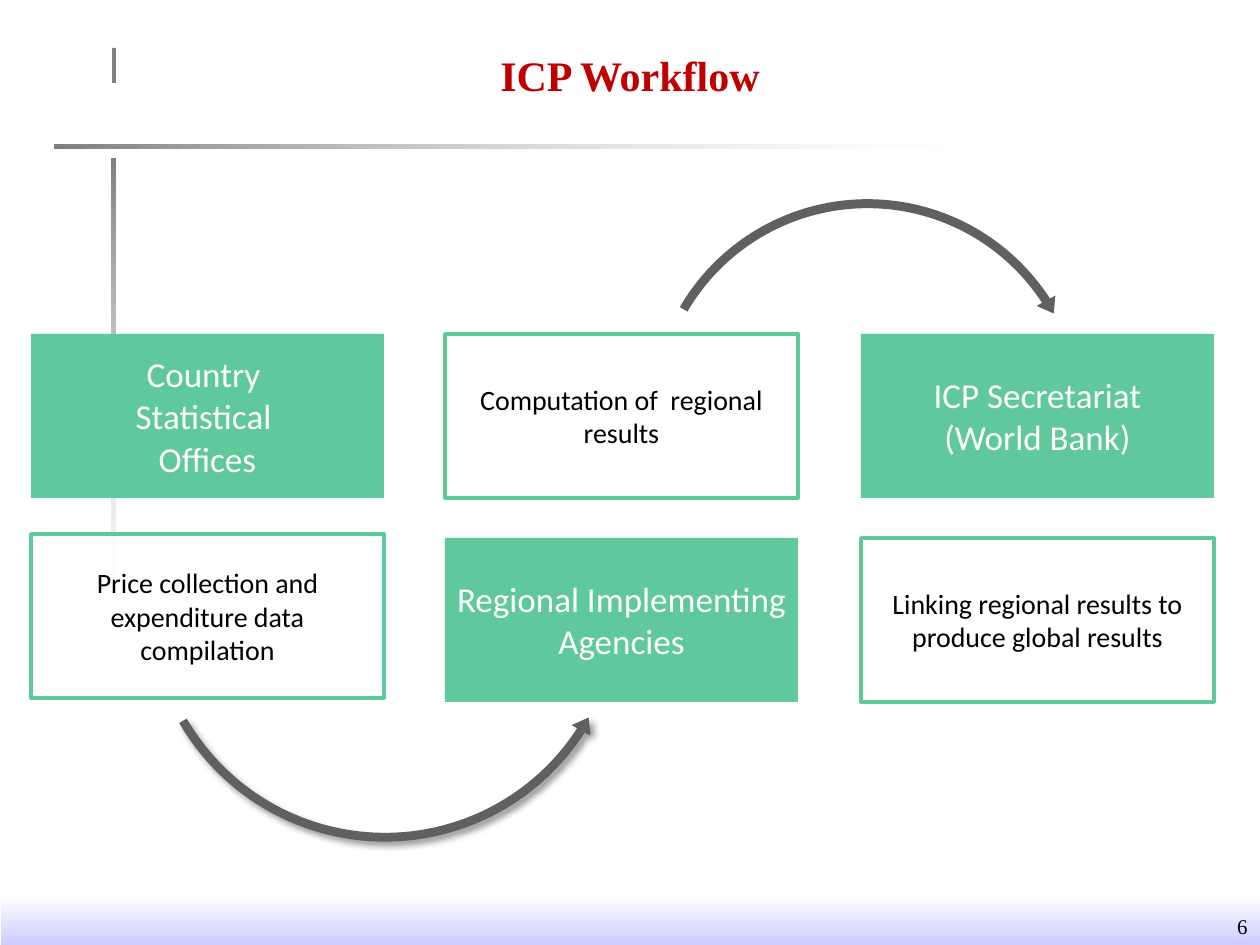
from dataclasses import dataclass

from lxml import etree
from pptx import Presentation
from pptx.dml.color import RGBColor
from pptx.enum.shapes import MSO_SHAPE
from pptx.enum.text import MSO_ANCHOR, PP_ALIGN
from pptx.oxml.ns import qn
from pptx.util import Emu, Pt

PX = 914400 / 126


@dataclass(frozen=True)
class Theme:
    green: str = "60C99C"
    red: str = "C00000"
    white: str = "FFFFFF"
    black: str = "000000"
    rule: str = "808080"
    arrow: str = "606060"
    footer: str = "CCCCFF"
    serif: str = "Times New Roman"
    sans: str = "Calibri"
    title_size: int = 24
    actor_size: int = 20
    task_size: int = 16
    number_size: int = 12


THEME = Theme()

# Grid of boxes: three columns, two rows
BOX_WIDTH, BOX_HEIGHT = 353, 164
COLUMNS = (31, 445, 861)
TOP_ROW, BOTTOM_ROW = 334, 538


def px(length):
    return Emu(round(length * PX))


def rgb(value):
    return RGBColor.from_string(value)


def set_alpha(color_element, percent):
    alpha = etree.SubElement(color_element, qn("a:alpha"))
    alpha.set("val", str(percent * 1000))


def add_shape(page, preset, bounds, fill=None):
    shape = page.shapes.add_shape(preset, *map(px, bounds))
    shape.shadow.inherit = False
    shape.line.fill.background()
    if fill:
        shape.fill.solid()
        shape.fill.fore_color.rgb = rgb(fill)
    return shape


def add_gradient_bar(page, bounds, start, end, angle, end_alpha=100):
    bar = add_shape(page, MSO_SHAPE.RECTANGLE, bounds)
    bar.fill.gradient()
    bar.fill.gradient_angle = angle
    for stop, color in zip(bar.fill.gradient_stops, (start, end)):
        stop.color.rgb = rgb(color)
    if end_alpha < 100:
        set_alpha(bar.element.spPr.findall(".//" + qn("a:srgbClr"))[-1], end_alpha)


def write_text(frame, lines, font, size, color, align=PP_ALIGN.CENTER, bold=False, after=0):
    frame.word_wrap = True
    for index, line in enumerate(lines):
        para = frame.paragraphs[0] if index == 0 else frame.add_paragraph()
        para.alignment = align
        para.space_after = Pt(after)
        span = para.add_run()
        span.text = line
        span.font.name = font
        span.font.size = Pt(size)
        span.font.bold = bold
        span.font.color.rgb = rgb(color)


def add_actor(page, left, top, lines):
    box = add_shape(page, MSO_SHAPE.RECTANGLE, (left, top, BOX_WIDTH, BOX_HEIGHT), THEME.green)
    frame = box.text_frame
    frame.vertical_anchor = MSO_ANCHOR.MIDDLE
    frame.margin_left = frame.margin_right = px(5)
    frame.margin_top = frame.margin_bottom = px(4)
    write_text(frame, lines, THEME.sans, THEME.actor_size, THEME.white)


def add_task(page, left, top, text):
    box = add_shape(page, MSO_SHAPE.RECTANGLE, (left, top, BOX_WIDTH, BOX_HEIGHT), THEME.white)
    set_alpha(box.element.spPr.find(".//" + qn("a:srgbClr")), 90)
    box.line.color.rgb = rgb(THEME.green)
    box.line.width = Pt(2)
    box.text_frame.vertical_anchor = MSO_ANCHOR.MIDDLE
    write_text(box.text_frame, [text], THEME.sans, THEME.task_size, THEME.black, after=6)


def add_arc_arrow(page, preset, bounds, rotation, adjustments):
    arrow = add_shape(page, preset, bounds, THEME.arrow)
    arrow.rotation = rotation
    for index, value in enumerate(adjustments):
        arrow.adjustments[index] = value
    return arrow


def add_shadow(shape):
    effects = shape.element.spPr.find(qn("a:effectLst"))
    shadow = etree.SubElement(effects, qn("a:outerShdw"))
    for name, value in (("blurRad", Pt(4)), ("dist", Pt(3)), ("dir", 45 * 60000)):
        shadow.set(name, str(int(value)))
    color = etree.SubElement(shadow, qn("a:srgbClr"))
    color.set("val", THEME.black)
    set_alpha(color, 40)


def add_backdrop(page):
    add_gradient_bar(page, (54, 145, 902, 4), THEME.rule, THEME.white, 0, 29)
    add_gradient_bar(page, (111, 159, 4, 511), THEME.rule, THEME.white, 270, 29)
    add_shape(page, MSO_SHAPE.RECTANGLE, (112, 48, 4, 35), THEME.rule)
    add_gradient_bar(page, (1, 895, 1259, 50), THEME.white, THEME.footer, 270)
    number = page.shapes.add_textbox(*map(px, (1002, 907, 258, 38)))
    write_text(number.text_frame, ["6"], THEME.serif, THEME.number_size, THEME.black,
               PP_ALIGN.RIGHT)


def add_title(page, text):
    title = page.shapes.title
    title.left, title.top, title.width, title.height = map(px, (63, 38, 1134, 91))
    title.text_frame.vertical_anchor = MSO_ANCHOR.TOP
    title.text_frame.margin_top = px(11)
    write_text(title.text_frame, [text], THEME.serif, THEME.title_size, THEME.red, bold=True)


def main():
    deck = Presentation()
    deck.slide_width, deck.slide_height = px(1260), px(945)
    page = deck.slides.add_slide(deck.slide_layouts[5])
    add_backdrop(page)
    add_title(page, "ICP Workflow")

    # Arrows from one stage to the next
    lower = add_arc_arrow(page, MSO_SHAPE.LEFT_CIRCULAR_ARROW, (141, 360, 488, 488), 353.8,
                          (0.018, 2.204, 23.402, 93.688, 0.022))
    add_shadow(lower)
    add_arc_arrow(page, MSO_SHAPE.CIRCULAR_ARROW, (644, 193, 447, 447), 7.5,
                  (0.02, 2.413, 191.718, 121.642, 0.024))

    # Tasks and the bodies in charge of them
    first, second, third = COLUMNS
    add_task(page, first, BOTTOM_ROW - 4, "Price collection and expenditure data compilation")
    add_task(page, second, TOP_ROW, "Computation of  regional results")
    add_task(page, third, BOTTOM_ROW, "Linking regional results to produce global results")
    add_actor(page, first, TOP_ROW, ["Country ", "Statistical ", "Offices"])
    add_actor(page, second, BOTTOM_ROW, ["Regional Implementing Agencies"])
    add_actor(page, third, TOP_ROW, ["ICP Secretariat", "(World Bank)"])

    deck.save("out.pptx")


if __name__ == "__main__":
    main()
